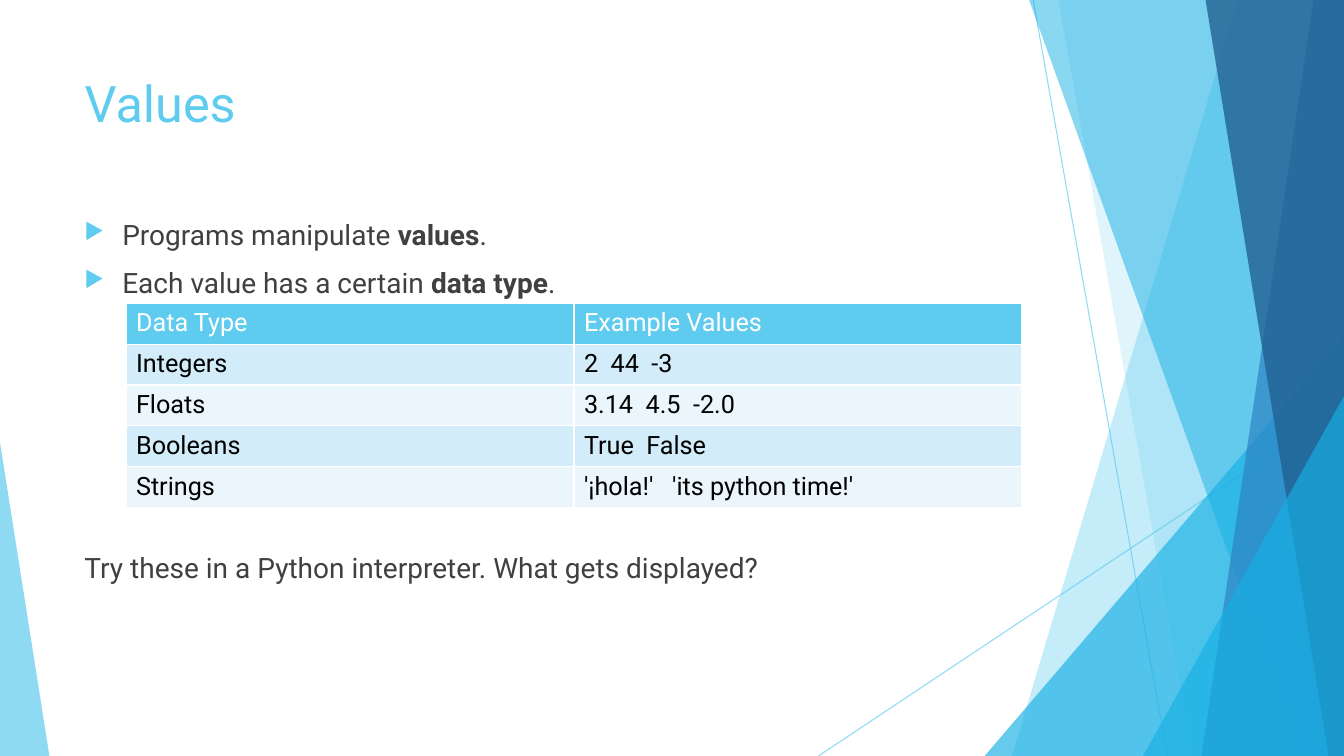
from lxml.etree import SubElement
from pptx import Presentation
from pptx.dml.color import RGBColor
from pptx.enum.shapes import MSO_CONNECTOR, MSO_SHAPE
from pptx.enum.text import MSO_ANCHOR
from pptx.oxml import parse_xml
from pptx.oxml.ns import nsdecls, qn
from pptx.util import Pt

FONT = "Roboto"
WIDE, HIGH = 960, 540
HUES = {
    "sky": "5FCBEF", "cyan": "17B0E4", "blue": "2E83C3", "navy": "226292",
    "gray": "404040", "black": "000000", "white": "FFFFFF",
    "band": "D2ECF9", "pale": "EAF6FC",
}
TITLE = "Values"
POINTS = [
    [("Programs manipulate ", False), ("values", True), (".", False)],
    [("Each value has a certain ", False), ("data type", True), (".", False)],
]
PROMPT = [[("Try these in a Python interpreter. What gets displayed?", False)]]
TYPES = [
    ("Data Type", "Example Values"),
    ("Integers", "2  44  -3"),
    ("Floats", "3.14  4.5  -2.0"),
    ("Booleans", "True  False"),
    ("Strings", "'¡hola!'   'its python time!'"),
]
RAYS = [(738, 0, 833.8, HIGH), (WIDE, 290.2, 584.6, HIGH)]
# kind "pane": top x, bottom x; kind "peak": left, top, width, apex
DECOR = [
    ("pane", (884.2, 722.9), "sky", 36),
    ("pane", (756, 851.8), "sky", 20),
    ("peak", (703.4, 239.8, 256.6, 1), "cyan", 66),
    ("pane", (735.1, 929.5), "cyan", 50),
    ("pane", (938.2, 858.2), "blue", 70),
    ("pane", (861.1, 949), "navy", 80),
    ("peak", (816.5, 283, 143.5, 1), "cyan", 66),
    ("peak", (0, 316.1, 35.3, 0), "sky", 70),
]
DECOR_LEFT, TEXT_WIDE = 53.3, 676.8
TABLE = (90, 216.6, 640)
ROW = 29.2


def rgb(hue):
    return RGBColor.from_string(HUES[hue])


def fade(fill, hue, part):
    fill.solid()
    fill.fore_color.rgb = rgb(hue)
    tint = fill._xPr.find(".//" + qn("a:srgbClr"))
    SubElement(tint, qn("a:alpha"), val=str(part * 1000))


def style(run, size, hue, bold=False):
    run.font.name, run.font.size, run.font.bold = FONT, Pt(size), bold
    run.font.color.rgb = rgb(hue)


def add_ray(shapes, ends):
    ray = shapes.add_connector(MSO_CONNECTOR.STRAIGHT, *map(Pt, ends))
    ray.line.width = Pt(0.75)
    fade(ray.line.fill, "sky", 70)
    SubElement(ray._element.spPr, qn("a:effectLst"))


def add_decor(shapes, kind, dims, hue, part):
    if kind == "pane":
        top, base = dims
        pen = shapes.build_freeform(Pt(top), 0)
        pen.add_line_segments(
            [(Pt(WIDE), 0), (Pt(WIDE), Pt(HIGH)), (Pt(base), Pt(HIGH))])
        form = pen.convert_to_shape()
    else:
        left, top, width, apex = dims
        form = shapes.add_shape(MSO_SHAPE.ISOSCELES_TRIANGLE, Pt(left), Pt(top),
                                Pt(width), Pt(HIGH - top))
        form.adjustments[0] = apex
    form.shadow.inherit = False
    form.line.fill.background()
    fade(form.fill, hue, part)


def add_text(shapes, top, height, lines, marked):
    box = shapes.add_textbox(Pt(DECOR_LEFT), Pt(top), Pt(TEXT_WIDE), Pt(height))
    frame = box.text_frame
    frame.word_wrap = True
    for i, parts in enumerate(lines):
        para = frame.add_paragraph() if i else frame.paragraphs[0]
        para.space_before = Pt(10 if i else 0)
        for words, bold in parts:
            run = para.add_run()
            run.text = words
            style(run, 20, "gray", bold)
        if marked:
            props = para._p.get_or_add_pPr()
            props.set("marL", str(Pt(27)))
            props.set("indent", str(-Pt(27)))
            tint = SubElement(props, qn("a:buClr"))
            SubElement(tint, qn("a:srgbClr"), val=HUES["sky"])
            SubElement(props, qn("a:buSzPct"), val="80000")
            SubElement(props, qn("a:buChar"), char="▶")


def add_grid(shapes):
    left, top, width = TABLE
    grid = shapes.add_table(len(TYPES), 2, Pt(left), Pt(top), Pt(width),
                            Pt(ROW * len(TYPES))).table
    for col in grid.columns:
        col.width = Pt(width / 2)
    for i, texts in enumerate(TYPES):
        grid.rows[i].height = Pt(ROW)
        back = "sky" if i == 0 else "band" if i % 2 else "pale"
        for j, words in enumerate(texts):
            cell = grid.cell(i, j)
            cell.text_frame.text = words
            style(cell.text_frame.paragraphs[0].runs[0], 18,
                  "black" if i else "white")
            cell.fill.solid()
            cell.fill.fore_color.rgb = rgb(back)
            props = cell._tc.get_or_add_tcPr()
            for k, side in enumerate("LRTB"):
                props.insert(k, parse_xml(
                    f'<a:ln{side} {nsdecls("a")} w="{Pt(1)}"><a:solidFill>'
                    f'<a:srgbClr val="{HUES["white"]}"/></a:solidFill></a:ln{side}>'))


def main():
    deck = Presentation()
    deck.slide_width, deck.slide_height = Pt(WIDE), Pt(HIGH)
    slide = deck.slides.add_slide(deck.slide_layouts[5])
    shapes = slide.shapes
    for ends in RAYS:
        add_ray(shapes, ends)
    for item in DECOR:
        add_decor(shapes, *item)
    title = shapes.title
    title.left, title.top = Pt(DECOR_LEFT), Pt(48)
    title.width, title.height = Pt(TEXT_WIDE), Pt(104)
    frame = title.text_frame
    frame.text = TITLE
    frame.vertical_anchor = MSO_ANCHOR.TOP
    frame.paragraphs[0].alignment = 1
    style(frame.paragraphs[0].runs[0], 36, "sky")
    add_text(shapes, 152, 64, POINTS, True)
    add_text(shapes, 390, 32, PROMPT, False)
    add_grid(shapes)
    deck.save("out.pptx")


if __name__ == "__main__":
    main()
